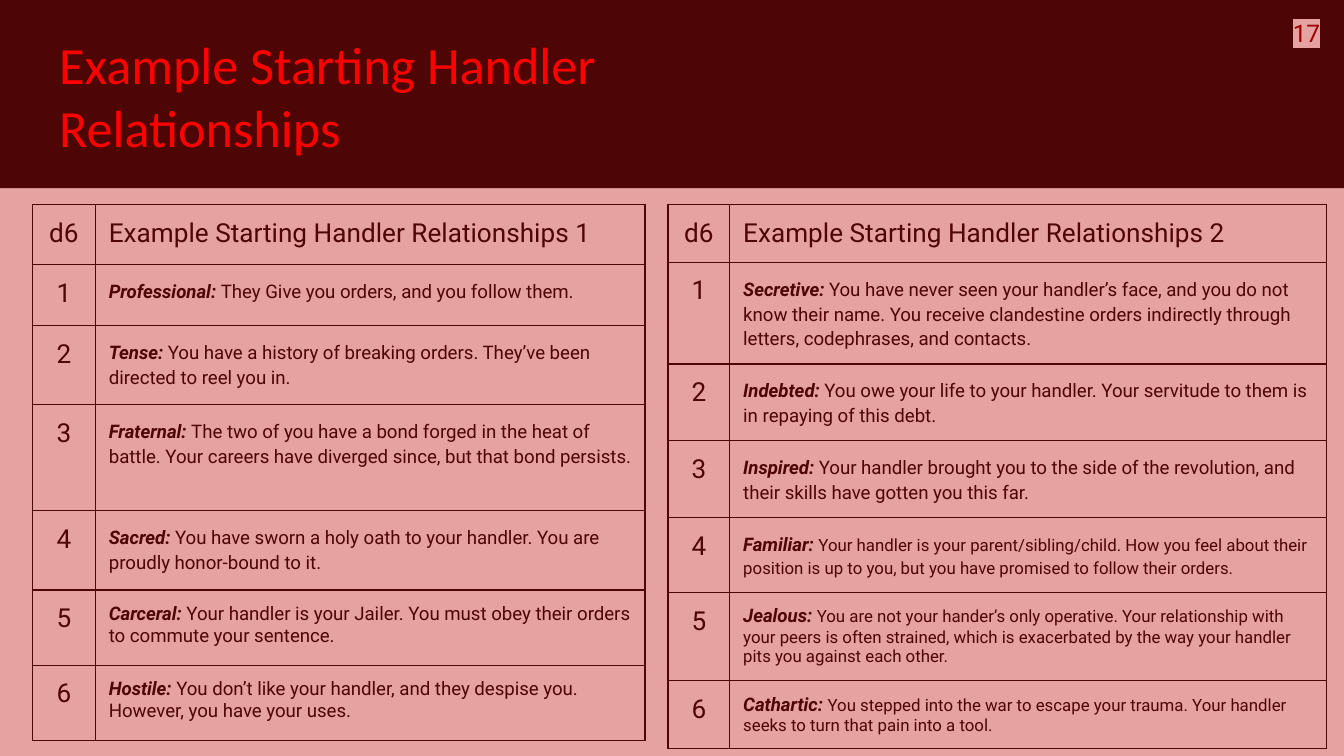
import dataclasses
import pptx
import pptx.dml.color
import pptx.enum.shapes
import pptx.enum.text
import pptx.oxml
import pptx.oxml.ns
import pptx.util
from pptx.util import Inches

ALIGN = pptx.enum.text.PP_ALIGN


@dataclasses.dataclass(frozen=True)
class Theme:
    """Colours, fonts and type sizes of the slide."""
    dark: str = "4D0505"
    pink: str = "E6A1A1"
    red: str = "FF0000"
    page: str = "990000"
    head: str = "Calibri"
    body: str = "Roboto"
    title: int = 28
    label: int = 14
    number: int = 13
    text: int = 10
    small: int = 9


THEME = Theme()

LEFT = [
    ("Professional:", "They Give you orders, and you follow them.", 1.15, THEME.text),
    ("Tense:", "You have a history of breaking orders. They’ve been directed to reel you in.",
     1.15, THEME.text),
    ("Fraternal:", "The two of you have a bond forged in the heat of battle. "
     "Your careers have diverged since, but that bond persists.", 1.15, THEME.text),
    ("Sacred:", "You have sworn a holy oath to your handler. You are proudly honor-bound to it.",
     1.15, THEME.text),
    ("Carceral:", "Your handler is your Jailer. You must obey their orders to commute your sentence.",
     1, THEME.text),
    ("Hostile:", "You don’t like your handler, and they despise you. However, you have your uses.",
     1, THEME.text),
]

RIGHT = [
    ("Secretive:", "You have never seen your handler’s face, and you do not know their name. "
     "You receive clandestine orders indirectly through letters, codephrases, and contacts.",
     1.15, THEME.text),
    ("Indebted:", "You owe your life to your handler. Your servitude to them is in repaying of this debt.",
     1.15, THEME.text),
    ("Inspired:", "Your handler brought you to the side of the revolution, "
     "and their skills have gotten you this far.", 1.15, THEME.text),
    ("Familiar:", "Your handler is your parent/sibling/child. How you feel about their position "
     "is up to you, but you have promised to follow their orders.", 1.15, THEME.small),
    ("Jealous:", "You are not your hander’s only operative. Your relationship with your peers is often "
     "strained, which is exacerbated by the way your handler pits you against each other.",
     1, THEME.small),
    ("Cathartic:", "You stepped into the war to escape your trauma. "
     "Your handler seeks to turn that pain into a tool.", 1, THEME.small),
]


def rgb(code):
    """Turn a hex code into a colour."""
    return pptx.dml.color.RGBColor.from_string(code)


def style(para, face, size, color, align=ALIGN.LEFT):
    """Set the font and alignment of a paragraph."""
    para.alignment = align
    para.font.name = face
    para.font.size = pptx.util.Pt(size)
    para.font.color.rgb = rgb(color)


def pad(frame):
    """Give a text frame even insets, wrapping and a top anchor."""
    frame.margin_left = frame.margin_right = Inches(0.1)
    frame.margin_top = frame.margin_bottom = Inches(0.1)
    frame.word_wrap = True
    frame.auto_size = pptx.enum.text.MSO_AUTO_SIZE.NONE
    frame.vertical_anchor = pptx.enum.text.MSO_ANCHOR.TOP


def add_band(slide):
    """Draw the dark band behind the title."""
    band = slide.shapes.add_shape(
        pptx.enum.shapes.MSO_SHAPE.RECTANGLE, 0, 0, Inches(10), Inches(1.4))
    band.shadow.inherit = False
    band.fill.solid()
    band.fill.fore_color.rgb = rgb(THEME.dark)
    band.line.fill.background()
    slide.shapes._spTree.insert(2, band._element)


def set_title(slide, text):
    """Place and format the title."""
    title = slide.shapes.title
    title.left, title.top = Inches(0.34), Inches(0.14)
    title.width, title.height = Inches(4.94), Inches(1.09)
    title.text_frame.text = text
    pad(title.text_frame)
    style(title.text_frame.paragraphs[0], THEME.head, THEME.title, THEME.red)


def add_page(slide, text):
    """Add the highlighted page number."""
    box = slide.shapes.add_textbox(Inches(9.18), 0, Inches(0.74), Inches(0.7))
    pad(box.text_frame)
    para = box.text_frame.paragraphs[0]
    run = para.add_run()
    run.text = text
    para.line_spacing = 1.15
    para.space_after = pptx.util.Pt(16)
    style(para, THEME.body, THEME.number, THEME.page, ALIGN.RIGHT)
    run.font._element.append(pptx.oxml.parse_xml(
        f'<a:highlight {pptx.oxml.ns.nsdecls("a")}>'
        f'<a:srgbClr val="{THEME.pink}"/></a:highlight>'))


def frame_cell(cell):
    """Give a cell insets, thin borders and no fill."""
    cell.margin_left = cell.margin_right = Inches(0.1)
    cell.margin_top = cell.margin_bottom = Inches(0.1)
    props = cell._tc.get_or_add_tcPr()
    for side in ("lnL", "lnR", "lnT", "lnB"):
        props.append(pptx.oxml.parse_xml(
            f'<a:{side} {pptx.oxml.ns.nsdecls("a")} w="{pptx.util.Pt(0.75)}">'
            f'<a:solidFill><a:srgbClr val="{THEME.dark}"/></a:solidFill></a:{side}>'))
    cell.fill.background()


def fill_label(cell, text, align=ALIGN.LEFT):
    """Write a heading or a die number in a cell."""
    frame_cell(cell)
    cell.text = text
    style(cell.text_frame.paragraphs[0], THEME.body, THEME.label, THEME.dark, align)


def fill_entry(cell, name, text, space, size):
    """Write a bold italic name and its description in a cell."""
    frame_cell(cell)
    para = cell.text_frame.paragraphs[0]
    lead = para.add_run()
    lead.text = name + " "
    lead.font.bold = lead.font.italic = True
    lead.font.size = pptx.util.Pt(THEME.text)
    para.add_run().text = text
    para.line_spacing = space
    if space > 1:
        para.space_after = pptx.util.Pt(16)
    style(para, THEME.body, size, THEME.dark)


def add_rolls(slide, left, widths, heights, head, entries):
    """Add a d6 table of relationships."""
    table = slide.shapes.add_table(
        len(heights), len(widths), Inches(left), Inches(1.52),
        Inches(sum(widths)), Inches(sum(heights))).table
    table.first_row = table.horz_banding = False
    for col, width in zip(table.columns, widths):
        col.width = Inches(width)
    for row, height in zip(table.rows, heights):
        row.height = Inches(height)
    fill_label(table.cell(0, 0), "d6", ALIGN.CENTER)
    fill_label(table.cell(0, 1), head)
    for roll, entry in enumerate(entries, 1):
        fill_label(table.cell(roll, 0), str(roll), ALIGN.CENTER)
        fill_entry(table.cell(roll, 1), *entry)


def main():
    """Build and save the slide."""
    deck = pptx.Presentation()
    deck.slide_width = Inches(10)
    deck.slide_height = deck.slide_width * 9 // 16
    slide = deck.slides.add_slide(deck.slide_layouts[5])
    slide.background.fill.solid()
    slide.background.fill.fore_color.rgb = rgb(THEME.pink)
    topic = "Example Starting Handler Relationships"
    add_band(slide)
    set_title(slide, topic)
    add_page(slide, "17")
    add_rolls(slide, 0.24, [0.47, 4.09], [0.45, 0.45, 0.59, 0.79, 0.59, 0.56, 0.56],
              topic + " 1", LEFT)
    add_rolls(slide, 4.97, [0.46, 4.44], [0.33, 0.58, 0.31] + [0.43] * 4,
              topic + " 2", RIGHT)
    deck.save("out.pptx")


if __name__ == "__main__":
    main()
